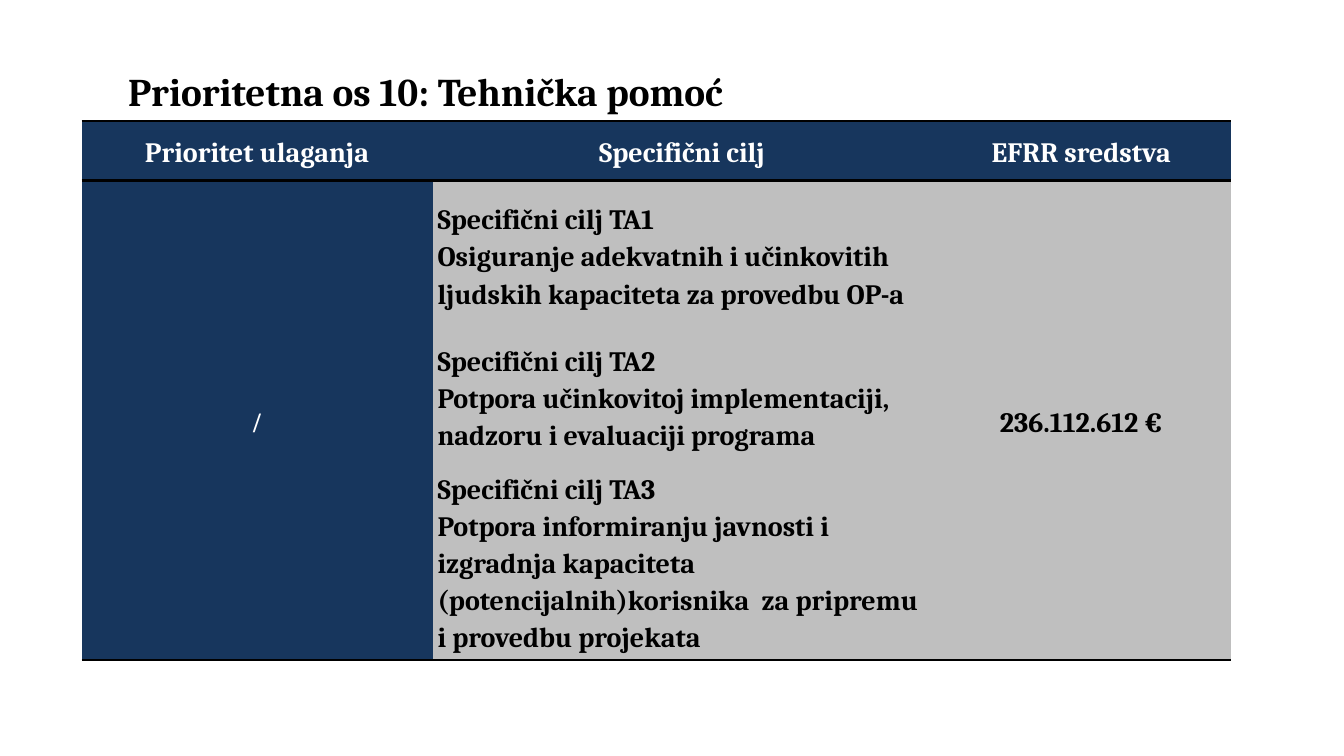
from dataclasses import dataclass

from lxml.etree import SubElement
from pptx import Presentation
from pptx.dml.color import RGBColor
from pptx.enum.text import MSO_ANCHOR as Anchor, PP_ALIGN as Align
from pptx.oxml.ns import qn
from pptx.util import Inches, Pt


@dataclass(frozen=True)
class Theme:
    navy: str = "17365D"
    grey: str = "BFBFBF"
    black: str = "000000"
    white: str = "FFFFFF"
    font: str = "Cambria"
    slash_font: str = "Times New Roman"
    title_size: int = 28
    table_size: int = 20
    rule_width: int = 2


THEME = Theme()
COLUMN_WIDTHS = [3.48, 4.95, 2.97]
ROW_HEIGHTS = [0.59, 1.48, 1.32, 1.96]
HEADERS = ["Prioritet ulaganja", "Specifični cilj", "EFRR sredstva"]
GOALS = [
    "Osiguranje adekvatnih i učinkovitih ljudskih kapaciteta za provedbu OP-a",
    "Potpora učinkovitoj implementaciji, nadzoru i evaluaciji programa",
    "Potpora informiranju javnosti i izgradnja kapaciteta "
    "(potencijalnih)korisnika  za pripremu i provedbu projekata",
]


def write_text(frame, *lines, size=THEME.table_size, color=THEME.black,
               font=THEME.font, align=Align.LEFT, spacing=1.15):
    for index, line in enumerate(lines):
        paragraph = frame.add_paragraph() if index else frame.paragraphs[0]
        paragraph.alignment = align
        paragraph.line_spacing = spacing
        run = paragraph.add_run()
        run.text = line
        run.font.name = font
        run.font.size = Pt(size)
        run.font.bold = True
        run.font.color.rgb = RGBColor.from_string(color)


def set_borders(cell, ruled_sides):
    """Rule the given sides (T, B) and clear the others."""
    properties = cell._tc.get_or_add_tcPr()
    for side in "LRTB":
        line = SubElement(properties, qn(f"a:ln{side}"))
        if side in ruled_sides:
            line.set("w", str(Pt(THEME.rule_width)))
            fill = SubElement(line, qn("a:solidFill"))
            SubElement(fill, qn("a:srgbClr")).set("val", THEME.black)
        else:
            line.set("w", "0")
            SubElement(line, qn("a:noFill"))


def style_cell(cell, fill, ruled_sides):
    set_borders(cell, ruled_sides)
    cell.fill.solid()
    cell.fill.fore_color.rgb = RGBColor.from_string(fill)
    cell.vertical_anchor = Anchor.MIDDLE
    cell.margin_left = cell.margin_right = Inches(0.05)
    cell.margin_top, cell.margin_bottom = Inches(0.01), 0


def add_title(slide, left, top, width, height):
    title = slide.shapes.title
    title.left, title.top = Inches(left), Inches(top)
    title.width, title.height = Inches(width), Inches(height)
    frame = title.text_frame
    frame.vertical_anchor = Anchor.MIDDLE
    frame.margin_left = Inches(0.35)
    write_text(frame, "Prioritetna os 10: Tehnička pomoć",
               size=THEME.title_size, spacing=0.9)


def add_goal_table(slide, left, top, width, height):
    table = slide.shapes.add_table(
        len(ROW_HEIGHTS), len(COLUMN_WIDTHS), Inches(left), Inches(top),
        Inches(width), Inches(height)).table
    table.first_row = table.horz_banding = False
    for column, share in zip(table.columns, COLUMN_WIDTHS):
        column.width = Inches(width * share / sum(COLUMN_WIDTHS))
    for row, share in zip(table.rows, ROW_HEIGHTS):
        row.height = Inches(height * share / sum(ROW_HEIGHTS))

    # Fills and horizontal rules
    last = len(ROW_HEIGHTS) - 1
    for row in range(last + 1):
        for column in range(len(COLUMN_WIDTHS)):
            spans_body = row == 1 and column != 1
            top_rule = "T" if row < 2 else ""
            bottom_rule = "B" if row in (0, last) or spans_body else ""
            fill = THEME.navy if row == 0 or column == 0 else THEME.grey
            style_cell(table.cell(row, column), fill, top_rule + bottom_rule)

    # Outer columns span all goals
    for column in (0, 2):
        table.cell(1, column).merge(table.cell(last, column))

    # Text
    for column, header in enumerate(HEADERS):
        write_text(table.cell(0, column).text_frame, header,
                   color=THEME.white, align=Align.CENTER)
    write_text(table.cell(1, 0).text_frame, "/", color=THEME.white,
               font=THEME.slash_font, align=Align.CENTER)
    for number, goal in enumerate(GOALS, start=1):
        write_text(table.cell(number, 1).text_frame,
                   f"Specifični cilj TA{number}", goal)
    write_text(table.cell(1, 2).text_frame, "236.112.612 €",
               align=Align.CENTER)


def main():
    presentation = Presentation()
    presentation.slide_width = Inches(13.33)
    presentation.slide_height = Inches(7.5)
    title_only = presentation.slide_layouts[5]
    slide = presentation.slides.add_slide(title_only)
    add_title(slide, 0.92, 0.4, 11.5, 1.07)
    add_goal_table(slide, 0.81, 1.2, 11.4, 5.35)
    presentation.save("out.pptx")


if __name__ == "__main__":
    main()
